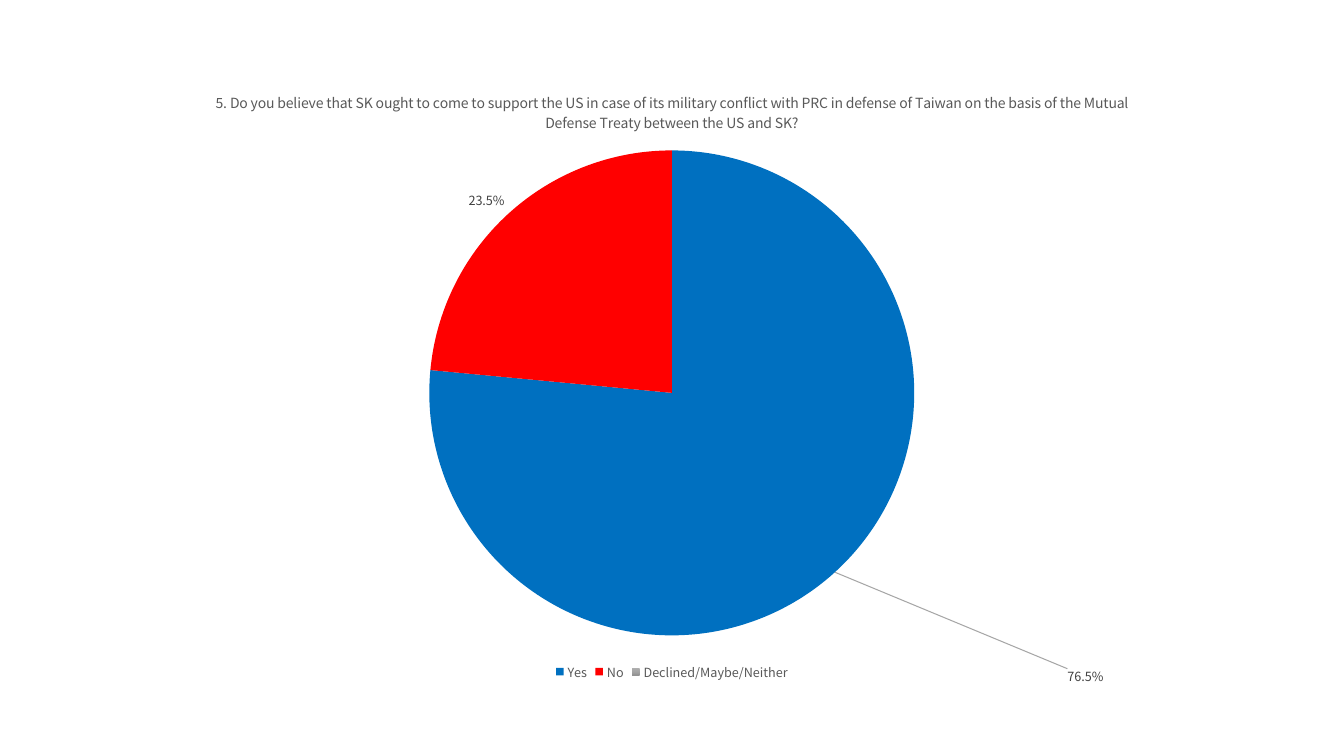
from copy import deepcopy

from pptx import Presentation
from pptx.chart.data import CategoryChartData
from pptx.dml.color import RGBColor
from pptx.enum.chart import XL_CHART_TYPE, XL_LABEL_POSITION, XL_LEGEND_POSITION
from pptx.oxml import parse_xml
from pptx.oxml.ns import nsdecls
from pptx.util import Cm, Pt

PIE = XL_CHART_TYPE.PIE
BOTTOM = XL_LEGEND_POSITION.BOTTOM
OUTSIDE_END = XL_LABEL_POSITION.OUTSIDE_END

FONT = "Noto Sans CJK KR"
PERCENT = "0.0%"
COLORS = {
    "yes": "0070C0",
    "no": "FF0000",
    "text": "595959",
    "label": "404040",
    "leader": "A6A6A6",
}
DECLINED_GRADIENT = [(0, "AFAFAF"), (0.5, "A5A5A5"), (1, "939393")]
QUESTION = (
    "5. Do you believe that SK ought to come to support the US in case of its "
    "military conflict with PRC in defense of Taiwan on the basis of the Mutual "
    "Defense Treaty between the US and SK?"
)


def style_font(font, size, color):
    font.name = FONT
    font.size = Pt(size)
    font.bold = False
    font.color.rgb = RGBColor.from_string(COLORS[color])


def manual_layout(**values):
    items = "".join(f'<c:{tag} val="{value}"/>' for tag, value in values.items())
    return parse_xml(
        f'<c:layout {nsdecls("c")}><c:manualLayout>{items}</c:manualLayout></c:layout>'
    )


deck = Presentation()
deck.slide_width, deck.slide_height = Cm(33.87), Cm(19.05)
page = deck.slides.add_slide(deck.slide_layouts[6])

# Pie chart
data = CategoryChartData(number_format=PERCENT)
data.categories = ["Yes", "No", "Declined/Maybe/Neither"]
data.add_series(QUESTION, [0.765, 0.235, 0])
chart = page.shapes.add_chart(
    PIE, Cm(1.78), Cm(1.78), Cm(30.3), Cm(15.47), data
).chart
chart.font.name = FONT
chart.font.size = Pt(10)
plot = chart.plots[0]
plot.vary_by_categories = True
series = plot.series[0]

# Plot area
plot_area = chart._chartSpace.chart.plotArea
for layout in plot_area.xpath("c:layout"):
    plot_area.remove(layout)
plot_area.insert(0, manual_layout(
    layoutTarget="inner", xMode="edge", yMode="edge", x=0.2, y=0.13, w=0.6, h=0.79
))

# Question and legend
chart.has_title = True
chart.chart_title.include_in_layout = False
title = chart.chart_title.text_frame
title.text = QUESTION
style_font(title.paragraphs[0].runs[0].font, 10, "text")
chart.has_legend = True
chart.legend.position = BOTTOM
chart.legend.include_in_layout = False
style_font(chart.legend.font, 9, "text")

# Slice colours
for index, answer in enumerate(["yes", "no"]):
    fill = series.points[index].format.fill
    fill.solid()
    fill.fore_color.rgb = RGBColor.from_string(COLORS[answer])
declined = series.points[2].format.fill
declined.gradient()
declined.gradient_angle = 270
stop_list = series._element.xpath(".//a:gsLst")[0]
stop_list.insert(1, deepcopy(stop_list[0]))
for stop, (position, color) in zip(declined.gradient_stops, DECLINED_GRADIENT):
    stop.position = position
    stop.color.rgb = RGBColor.from_string(color)

# Value labels
labels = series.data_labels
labels.show_value = True
labels.number_format = PERCENT
labels.number_format_is_linked = False
labels.position = OUTSIDE_END
style_font(labels.font, 9, "label")

# The Yes label is moved away from its slice, with a leader line
yes_label = series.points[0].data_label
yes_label.position = OUTSIDE_END
style_font(yes_label.font, 9, "label")
label_list = series._element.xpath("c:dLbls")[0]
yes_element = label_list.xpath("c:dLbl")[0]
yes_element.insert(1, manual_layout(x=0.19, y=0.15))
yes_element.insert(2, parse_xml(
    f'<c:numFmt {nsdecls("c")} formatCode="{PERCENT}" sourceLinked="0"/>'
))
label_list.append(parse_xml(
    f'<c:leaderLines {nsdecls("c", "a")}><c:spPr><a:ln w="9525"><a:solidFill>'
    f'<a:srgbClr val="{COLORS["leader"]}"/></a:solidFill></a:ln></c:spPr>'
    "</c:leaderLines>"
))

# The empty third slice has no label
label_list.insert(1, parse_xml(
    f'<c:dLbl {nsdecls("c")}><c:idx val="2"/><c:delete val="1"/></c:dLbl>'
))

deck.save("out.pptx")
